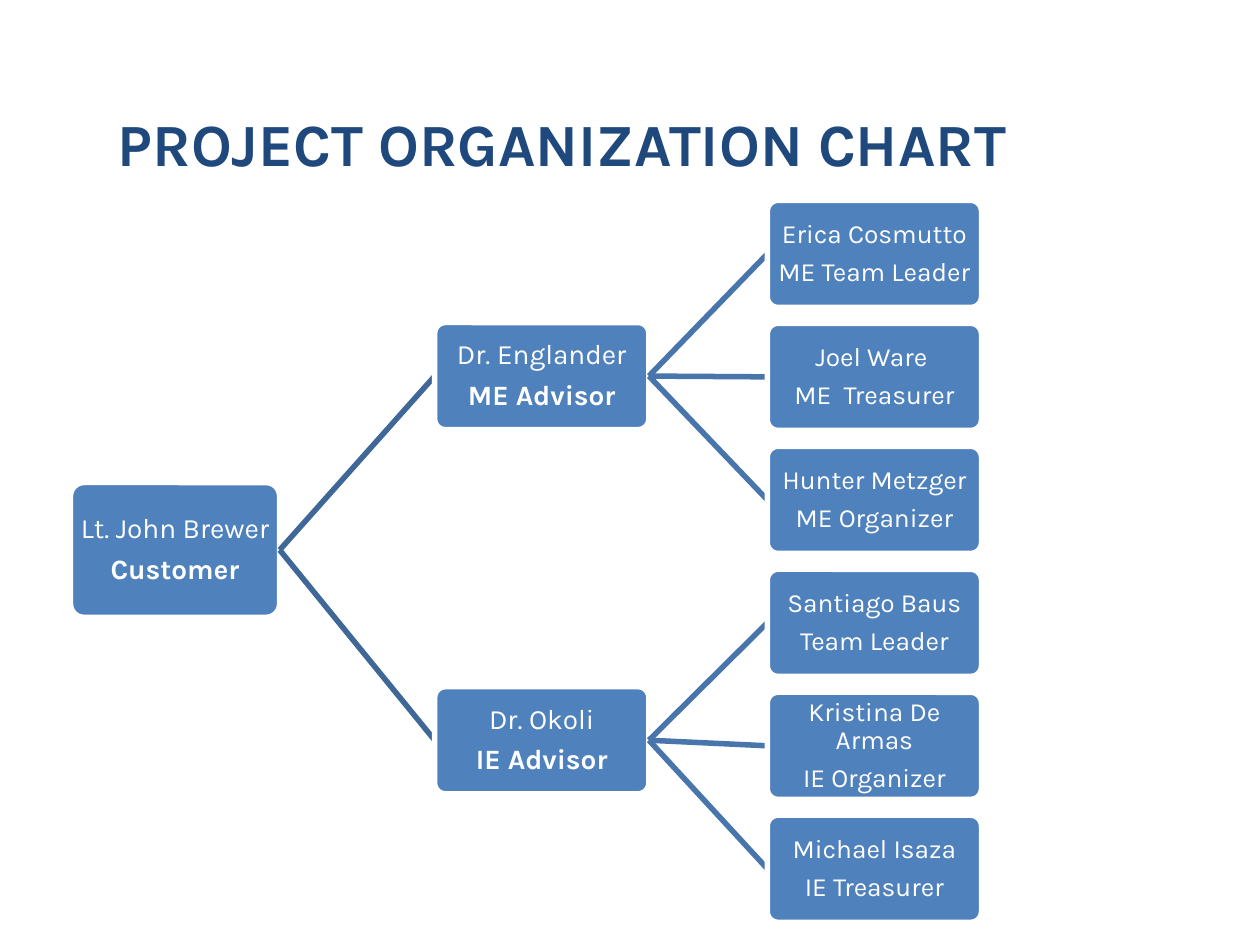
from pptx import Presentation
from pptx.dml.color import RGBColor
from pptx.enum.shapes import MSO_CONNECTOR as CONN, MSO_SHAPE as SHAPE
from pptx.enum.text import MSO_ANCHOR as ANCHOR, PP_ALIGN as ALIGN
from pptx.oxml.ns import qn
from pptx.util import Inches, Pt

TITLE = "PROJECT ORGANIZATION CHART"
CUSTOMER = ("Lt. John Brewer", "Customer")
TEAMS = [
    (("Dr. Englander", "ME Advisor"), 2.56, [
        ("Erica Cosmutto", "ME Team Leader"),
        ("Joel Ware ", "ME  Treasurer"),
        ("Hunter Metzger", "ME Organizer"),
    ]),
    (("Dr. Okoli", "IE Advisor"), 5.45, [
        ("Santiago Baus", "Team Leader"),
        ("Kristina De Armas", "IE Organizer"),
        ("Michael Isaza", "IE Treasurer"),
    ]),
]

FONT = "Karla"
NAVY = RGBColor(0x1F, 0x49, 0x7D)
BLUE = RGBColor(0x4F, 0x81, 0xBD)
WHITE = RGBColor(0xFF, 0xFF, 0xFF)
ADVISOR_LINE = RGBColor(0x3F, 0x67, 0x97)
MEMBER_LINE = RGBColor(0x48, 0x75, 0xAC)
LINE_WIDTH = Pt(3.15)

CUSTOMER_BOX = (0.56, 3.83, 1.66, 1.07)
ADVISOR_X, MEMBER_X = 3.45, 6.09
BOX_W, BOX_H = 1.7, 0.85
MEMBER_TOP, MEMBER_BOTTOM = 1.59, 7.32
MEMBER_COUNT = sum(len(members) for _, _, members in TEAMS)
MEMBER_STEP = (MEMBER_BOTTOM - BOX_H - MEMBER_TOP) / (MEMBER_COUNT - 1)


def style(p, size, color, bold=False):
    p.alignment = ALIGN.CENTER
    for r in p.runs:
        r.font.name, r.font.size, r.font.bold = FONT, Pt(size), bold
        r.font.color.rgb = color


def add_title(s):
    tf = s.shapes.add_textbox(*map(Inches, (0.5, 0.17, 7.92, 1.25))).text_frame
    tf.word_wrap = True
    tf.vertical_anchor = ANCHOR.BOTTOM
    tf.margin_left = tf.margin_right = Inches(0.05)
    tf.margin_top = tf.margin_bottom = 0
    tf.text = TITLE
    style(tf.paragraphs[0], 34.2, NAVY, True)


def add_box(s, person, box, size, bold_role):
    sp = s.shapes.add_shape(SHAPE.ROUNDED_RECTANGLE, *map(Inches, box))
    sp.shadow.inherit = False
    sp.adjustments[0] = 0.1
    sp.fill.solid()
    sp.fill.fore_color.rgb = BLUE
    sp.line.color.rgb = WHITE
    sp.line.width = LINE_WIDTH
    tf = sp.text_frame
    tf.word_wrap = True
    tf.vertical_anchor = ANCHOR.MIDDLE
    tf.margin_left = tf.margin_right = Inches(0.01)
    tf.margin_top = tf.margin_bottom = Inches(0.01)
    tf.text = "\n".join(person)
    name, role = tf.paragraphs
    style(name, size, WHITE)
    style(role, size, WHITE, bold_role)
    name.line_spacing = role.line_spacing = 0.9
    name.space_after = Pt(round(size * 0.36, 1))


def add_link(s, parent, child, color):
    px, py, pw, ph = parent
    cx, cy, _, ch = child
    ends = (px + pw, py + ph / 2, cx, cy + ch / 2)
    line = s.shapes.add_connector(CONN.STRAIGHT, *map(Inches, ends))
    line.line.color.rgb = color
    line.line.width = LINE_WIDTH
    sp_pr = line._element.spPr
    sp_pr.append(sp_pr.makeelement(qn("a:effectLst"), {}))


def main():
    prs = Presentation()
    prs.slide_width, prs.slide_height = Inches(10), Inches(7.5)
    s = prs.slides.add_slide(prs.slide_layouts[6])
    add_title(s)
    add_box(s, CUSTOMER, CUSTOMER_BOX, 16, True)
    member_y = MEMBER_TOP
    for advisor, advisor_y, members in TEAMS:
        advisor_box = (ADVISOR_X, advisor_y, BOX_W, BOX_H)
        add_link(s, CUSTOMER_BOX, advisor_box, ADVISOR_LINE)
        add_box(s, advisor, advisor_box, 16, True)
        for member in members:
            member_box = (MEMBER_X, member_y, BOX_W, BOX_H)
            add_link(s, advisor_box, member_box, MEMBER_LINE)
            add_box(s, member, member_box, 15, False)
            member_y += MEMBER_STEP
    prs.save("out.pptx")


if __name__ == "__main__":
    main()
